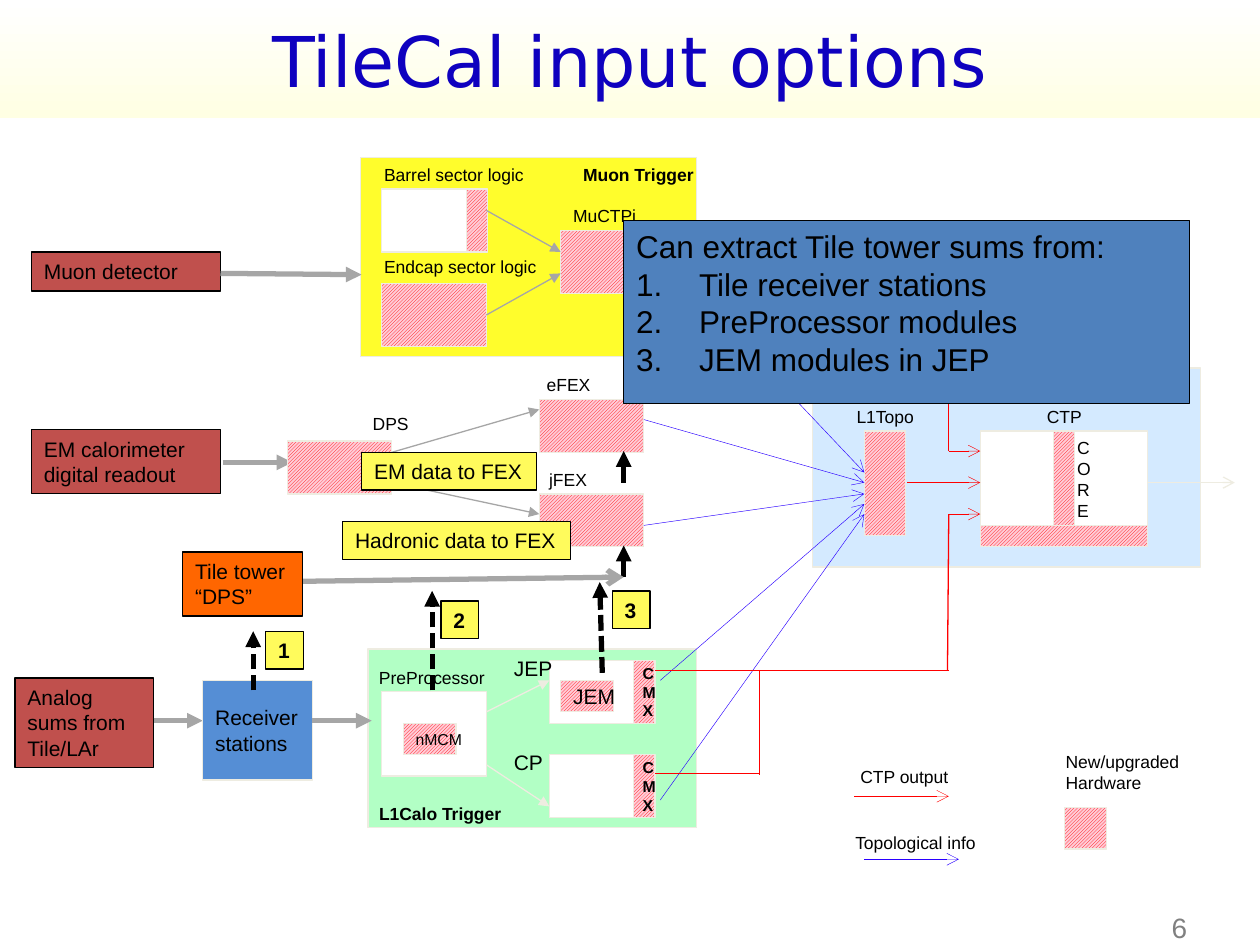
from dataclasses import dataclass

from lxml import etree
from pptx import Presentation
from pptx import util as u
from pptx.dml.color import RGBColor
from pptx.enum import dml, shapes, text
from pptx.oxml.ns import qn


@dataclass(frozen=True)
class Theme:
    """Colours, fonts and type sizes of the slide."""
    font: str = "Arial"
    title_font: str = "DejaVu Sans"
    title_size: int = 40
    callout: int = 18
    number: int = 16
    body: int = 12
    label: int = 10
    small: int = 9
    title: str = "0F01BF"
    band: str = "FFFFE3"
    white: str = "FFFFFF"
    black: str = "000000"
    gray: str = "A6A6A6"
    page: str = "808080"
    edge: str = "EEECE1"
    red: str = "FF0000"
    pink: str = "FFCCD7"
    blue: str = "2A00FF"
    brick: str = "C0504D"
    green: str = "B2FFC5"
    sky: str = "D4EAFF"
    yellow: str = "FFFD2C"
    note: str = "FFFB5C"
    receiver: str = "558ED5"
    answer: str = "4F81BD"
    orange: str = "FF6600"


def rgb(value):
    """Turn a hex string into a colour."""
    return RGBColor.from_string(value)


class Diagram:
    """Draws styled elements on one slide."""

    def __init__(self, s, theme):
        self.s, self.t = s, theme

    def title(self, words):
        """Place the title over a soft gradient band."""
        sp = self.s.shapes.title
        sp.left, sp.top, sp.width, sp.height = map(u.Inches, (0, 0, 10, 0.94))
        sp.fill.gradient()
        sp.fill.gradient_angle = 90
        for stop, color in zip(sp.fill.gradient_stops, (self.t.band, self.t.white)):
            stop.color.rgb = rgb(color)
        self.set_text(sp, words, self.t.title_size, color=self.t.title,
                      font=self.t.title_font, align=text.PP_ALIGN.CENTER)

    def set_text(self, sp, words, size, bold=False, wrap=True, color=None, font=None,
                 align=text.PP_ALIGN.LEFT, anchor=text.MSO_ANCHOR.MIDDLE):
        """Fill a shape with text, one paragraph a line."""
        tf = sp.text_frame
        tf.text = words
        tf.word_wrap = wrap
        tf.auto_size = text.MSO_AUTO_SIZE.NONE
        tf.vertical_anchor = anchor
        for p in tf.paragraphs:
            p.alignment = align
            p.font.size, p.font.bold = u.Pt(size), bold
            p.font.name = font or self.t.font
            p.font.color.rgb = rgb(color or self.t.black)

    def box(self, x, y, w, h, fill=None, line=None, words="", size=None, **style):
        """Add a rectangle, hatched when it has no fill colour."""
        sp = self.s.shapes.add_shape(shapes.MSO_SHAPE.RECTANGLE,
                                     *map(u.Inches, (x, y, w, h)))
        sp.shadow.inherit = False
        if fill:
            sp.fill.solid()
            sp.fill.fore_color.rgb = rgb(fill)
        else:
            sp.fill.patterned()
            sp.fill.pattern = dml.MSO_PATTERN.DARK_UPWARD_DIAGONAL
            sp.fill.fore_color.rgb = rgb(self.t.red)
            sp.fill.back_color.rgb = rgb(self.t.pink)
        sp.line.color.rgb = rgb(line or self.t.edge)
        sp.line.width = u.Pt(0.75)
        if words:
            self.set_text(sp, words, size or self.t.body, **style)
        return sp

    def label(self, x, y, w, words, size=None, wrap=False, **style):
        """Add a text box as high as its lines."""
        size = size or self.t.label
        h = 0.1 + (words.count("\n") + 1) * size / 60
        sp = self.s.shapes.add_textbox(*map(u.Inches, (x, y, w, h)))
        self.set_text(sp, words, size, wrap=wrap, **style)

    def line(self, x1, y1, x2, y2, color, width=0.75, tip=None, dashed=False):
        """Add a straight line with an optional arrowhead at its end."""
        c = self.s.shapes.add_connector(shapes.MSO_CONNECTOR.STRAIGHT,
                                        *map(u.Inches, (x1, y1, x2, y2)))
        c.line.color.rgb = rgb(color)
        c.line.width = u.Pt(width)
        if dashed:
            c.line.dash_style = dml.MSO_LINE.SQUARE_DOT
        pr = c._element.spPr
        if tip:
            etree.SubElement(pr.find(qn("a:ln")), qn("a:tailEnd"), type=tip)
        etree.SubElement(pr, qn("a:effectLst"))

    def number(self, paragraphs):
        """Number paragraphs with a hanging indent."""
        for p in paragraphs:
            pr = p._p.get_or_add_pPr()
            pr.set("marL", str(u.Inches(0.5)))
            pr.set("indent", str(-u.Inches(0.5)))
            bullet = etree.Element(qn("a:buAutoNum"), type="arabicPeriod")
            pr.insert(0, bullet)


def main():
    """Build the slide and save it."""
    prs = Presentation()
    prs.slide_width, prs.slide_height = u.Inches(10), u.Inches(7.5)
    t = Theme()
    d = Diagram(prs.slides.add_slide(prs.slide_layouts[5]), t)
    d.title("TileCal input options")
    d.label(7.19, 7.18, 2.33, "6", t.number, wrap=True, color=t.page,
            align=text.PP_ALIGN.RIGHT)

    for *place, fill in ((2.92, 5.15, 2.61, 1.42, t.green), (6.45, 2.92, 3.08, 1.58, t.sky),
                         (2.86, 1.25, 2.67, 1.58, t.yellow)):
        d.box(*place, fill)
    for *place, words in ((0.25, 3.41, 1.5, 0.51, "EM calorimeter\ndigital readout"),
                          (0.25, 2, 1.5, 0.31, "Muon detector"),
                          (0.12, 5.38, 1.1, 0.71, "Analog sums from Tile/LAr")):
        d.box(*place, t.brick, t.black, words)
    for ends in ((1.75, 2.17, 2.87, 2.18), (1.77, 3.67, 2.32, 3.67), (1.22, 5.72, 1.61, 5.72)):
        d.line(*ends, t.gray, 3, "triangle")
    d.line(9.11, 3.83, 9.8, 3.83, t.edge, tip="arrow")

    for place in ((3.03, 1.5, 0.83, 0.5), (3.03, 5.49, 0.83, 0.67), (4.36, 5.24, 0.83, 0.5),
                  (4.36, 5.99, 0.83, 0.5), (7.78, 3.42, 1.33, 0.83)):
        d.box(*place, t.white)
    for place in ((3.03, 2.25, 0.83, 0.5), (6.86, 3.42, 0.33, 0.83), (4.45, 1.83, 0.83, 0.5),
                  (4.28, 3.92, 0.83, 0.42), (4.28, 3.17, 0.83, 0.42), (2.28, 3.5, 0.83, 0.42),
                  (8.36, 3.42, 0.17, 0.83), (7.78, 4.17, 1.33, 0.17), (3.7, 1.5, 0.17, 0.5),
                  (8.45, 6.41, 0.33, 0.33)):
        d.box(*place)
    d.box(3.2, 5.74, 0.42, 0.25, words="nMCM", size=t.small, wrap=False)
    d.box(4.45, 5.4, 0.42, 0.25, words="JEM", wrap=False)
    for y in (5.24, 5.99):
        d.box(5.03, y, 0.17, 0.5, words="C\nM\nX", size=t.small, bold=True, wrap=False)

    for x, y, w, words in (
            (2.95, 1.98, 1.41, "Endcap sector logic"), (2.95, 1.25, 1.31, "Barrel sector logic"),
            (4.45, 1.58, 0.7, "MuCTPi"), (6.7, 3.17, 0.67, "L1Topo"), (8.21, 3.17, 0.48, "CTP"),
            (8.45, 3.42, 0.31, "C\nO\nR\nE"), (2.86, 3.23, 0.48, "DPS"),
            (4.24, 2.92, 0.55, "eFEX"), (4.26, 3.67, 0.5, "jFEX"),
            (2.91, 5.24, 1.04, "PreProcessor"), (6.69, 6.55, 1.17, "Topological info"),
            (6.73, 6.03, 0.91, "CTP output"), (8.36, 5.91, 1.1, "New/upgraded\nHardware")):
        d.label(x, y, w, words)
    d.label(4.53, 1.25, 1.09, "Muon Trigger", bold=True)
    d.label(2.91, 6.32, 1.18, "L1Calo Trigger", bold=True)
    d.label(3.98, 5.15, 0.5, "JEP", t.body)
    d.label(3.98, 5.9, 0.43, "CP", t.body)

    for ends in ((3.86, 2.5, 4.45, 2.17), (3.86, 1.67, 4.45, 2),
                 (3.11, 3.83, 4.28, 4.08), (3.11, 3.59, 4.28, 3.25)):
        d.line(*ends, t.gray, tip="triangle")
    for ends in ((3.86, 6.07, 4.36, 6.4), (3.86, 5.65, 4.36, 5.4)):
        d.line(*ends, t.edge, tip="triangle")
    for y in (4.33, 3.58):
        d.line(4.95, y + 0.25, 4.95, y, t.black, 3, "triangle")
    for ends in ((5.24, 6.35, 6.86, 4.08), (5.24, 5.4, 6.86, 4), (5.11, 4.17, 6.86, 3.92),
                 (5.11, 3.33, 6.86, 3.83), (5.28, 2.08, 6.86, 3.75), (6.86, 6.82, 7.61, 6.82)):
        d.line(*ends, t.blue, 0.25, "arrow")
    for x1, x2, y in ((6.78, 7.53, 6.32), (7.2, 7.78, 3.83), (7.53, 7.78, 3.58),
                      (7.53, 7.78, 4.08)):
        d.line(x1, y, x2, y, t.red, 0.25, "arrow")
    for ends in ((5.2, 5.32, 7.53, 5.32), (7.53, 3.58, 7.53, 2), (7.52, 5.32, 7.53, 4.08),
                 (6.03, 6.15, 6.03, 5.32), (5.2, 6.14, 6.03, 6.14)):
        d.line(*ends, t.red)

    d.box(1.61, 5.4, 0.87, 0.79, t.receiver, words="Receiver\nstations", wrap=False)
    d.line(2.48, 5.72, 2.95, 5.72, t.gray, 3, "triangle")
    d.line(1.93, 4.62, 4.95, 4.58, t.gray, 3, "arrow")
    for ends in ((3.43, 5.48, 3.43, 4.69), (2.01, 5.48, 2.01, 5.01), (4.78, 5.34, 4.76, 4.62)):
        d.line(*ends, t.black, 3, "triangle", dashed=True)

    top = text.MSO_ANCHOR.TOP
    for x, y, w, words in ((2.87, 3.59, 1.39, "EM data to FEX"),
                           (2.72, 4.14, 1.81, "Hadronic data to FEX"),
                           (2.11, 5.01, 0.3, "1"), (3.5, 4.77, 0.3, "2"), (4.86, 4.69, 0.3, "3")):
        d.box(x, y, w, 0.3, t.note, t.black, words, bold=words.isdigit(), wrap=False, anchor=top)
    d.box(1.45, 4.38, 0.95, 0.51, t.orange, t.black, "Tile tower\n“DPS”", wrap=False, anchor=top)
    sp = d.box(4.95, 1.75, 4.49, 1.45, t.answer, t.black,
               "Can extract Tile tower sums from:\nTile receiver stations\n"
               "PreProcessor modules\nJEM modules in JEP", t.callout, wrap=False, anchor=top)
    d.number(sp.text_frame.paragraphs[1:])
    prs.save("out.pptx")


if __name__ == "__main__":
    main()
